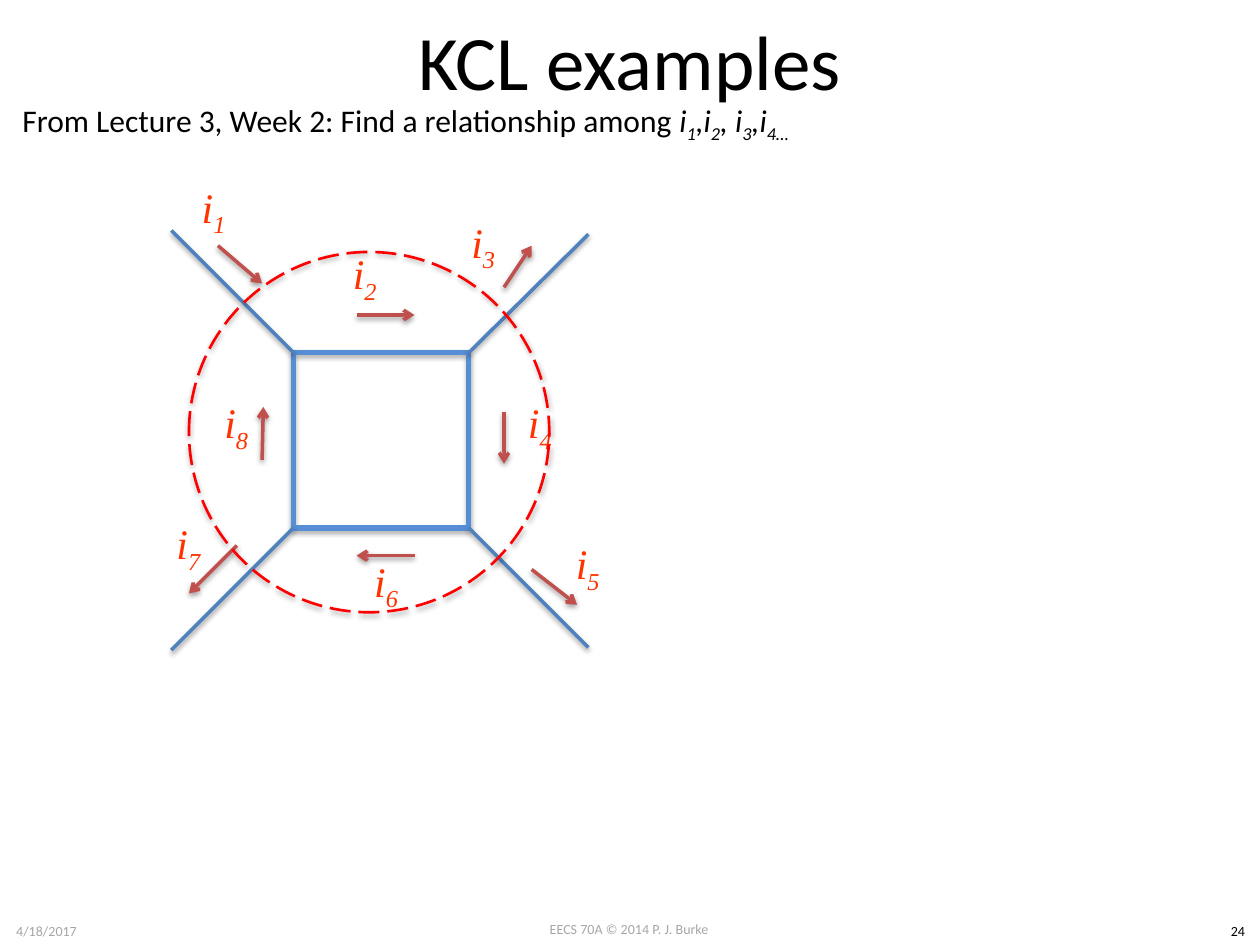
from lxml.etree import SubElement
from pptx import Presentation
from pptx.dml.color import RGBColor
from pptx.enum.dml import MSO_LINE
from pptx.enum.shapes import MSO_CONNECTOR, MSO_SHAPE
from pptx.enum.text import MSO_ANCHOR, PP_ALIGN
from pptx.oxml.ns import qn
from pptx.util import Inches, Pt


def color(value):
    return RGBColor.from_string(value)


class CircuitSlide:
    font = "Calibri"
    label_font = "Times New Roman"
    black = "000000"
    gray = "A6A6A6"
    label_color = "FF3300"
    arrow_color = "C0504D"
    wire_color = "4F81BD"
    loop_color = "558ED5"
    boundary_color = "FF0000"

    def __init__(self, presentation):
        self.slide = presentation.slides.add_slide(presentation.slide_layouts[5])

    def style_font(self, font, name, size, value):
        font.name = name
        font.size = Pt(size)
        font.color.rgb = color(value)

    def title(self, text):
        shape = self.slide.shapes.title
        shape.left, shape.top = Inches(0.5), Inches(0)
        shape.width, shape.height = Inches(9), Inches(0.95)
        shape.text_frame.text = text
        shape.text_frame.vertical_anchor = MSO_ANCHOR.MIDDLE
        paragraph = shape.text_frame.paragraphs[0]
        paragraph.alignment = PP_ALIGN.CENTER
        self.style_font(paragraph.font, self.font, 44, self.black)

    def text(self, box, pieces, size, value, name=font,
             align=PP_ALIGN.CENTER, anchor=MSO_ANCHOR.TOP, wrap=True):
        shape = self.slide.shapes.add_textbox(*map(Inches, box))
        frame = shape.text_frame
        frame.word_wrap = wrap
        frame.vertical_anchor = anchor
        paragraph = frame.paragraphs[0]
        paragraph.alignment = align
        self.style_font(paragraph.font, name, size, value)
        for content, italic, subscript in pieces:
            run = paragraph.add_run()
            run.text = content
            run.font.italic = italic
            if subscript:
                run._r.get_or_add_rPr().set("baseline", "-25000")

    def label(self, number, left, top):
        self.text((left, top, 0.77, 0.61),
                  [("i", True, False), (str(number), True, True)],
                  24, self.label_color, self.label_font,
                  anchor=MSO_ANCHOR.MIDDLE)

    def footer(self, box, content, value):
        self.text(box, [(content, False, False)], 8, value)

    def shadow(self, effects, opacity):
        outer = SubElement(effects, qn("a:outerShdw"), blurRad=str(Pt(3.1)),
                           dist=str(Pt(1.6)), dir="5400000", rotWithShape="0")
        black = SubElement(outer, qn("a:srgbClr"), val=self.black)
        SubElement(black, qn("a:alpha"), val=str(opacity * 1000))

    def line(self, start, end, value, arrow=False):
        connector = self.slide.shapes.add_connector(
            MSO_CONNECTOR.STRAIGHT, *map(Inches, start + end))
        connector.line.color.rgb = color(value)
        connector.line.width = Pt(2)
        properties = connector._element.spPr
        if arrow:
            SubElement(properties.find(qn("a:ln")), qn("a:tailEnd"), type="arrow")
        self.shadow(SubElement(properties, qn("a:effectLst")), 38)

    def outline(self, kind, box, value, width, dash=None):
        shape = self.slide.shapes.add_shape(kind, *map(Inches, box))
        shape.fill.background()
        shape.line.color.rgb = color(value)
        shape.line.width = Pt(width)
        if dash:
            shape.line.dash_style = dash
        shape.shadow.inherit = False
        self.shadow(shape._element.spPr.find(qn("a:effectLst")), 35)


def main():
    presentation = Presentation()
    presentation.slide_width = Inches(10)
    presentation.slide_height = Inches(7.5)
    circuit = CircuitSlide(presentation)

    circuit.title("KCL examples")
    question = [("From Lecture 3, Week 2: Find a relationship among ", False, False)]
    for name, index in (("i", "1"), (",i", "2"), (", i", "3"), (",i", "4…")):
        question += [(name, True, False), (index, True, True)]
    circuit.text((0.08, 0.75, 6.42, 0.4), question, 18, circuit.black,
                 align=PP_ALIGN.LEFT, wrap=False)

    left, top, side = 2.33, 2.8, 1.39
    right, bottom = left + side, top + side
    circuit.outline(MSO_SHAPE.RECTANGLE, (left, top, side, side),
                    circuit.loop_color, 3)
    for corner, end in (
        ((left, top), (1.36, 1.83)),
        ((right, top), (4.67, 1.86)),
        ((right, bottom), (4.67, 5.14)),
        ((left, bottom), (1.36, 5.16)),
    ):
        circuit.line(corner, end, circuit.wire_color)

    currents = [
        ((1.31, 1.36), (1.73, 1.95), (2.08, 2.25)),
        ((2.51, 1.89), (2.83, 2.5), (3.29, 2.5)),
        ((3.45, 1.64), (4, 2.28), (4.22, 1.95)),
        ((3.9, 3.07), (4, 3.27), (4, 3.68)),
        ((4.28, 4.19), (4.22, 4.52), (4.58, 4.8)),
        ((2.68, 4.33), (3.29, 4.41), (2.83, 4.41)),
        ((1.11, 4.03), (1.88, 4.33), (1.5, 4.71)),
        ((1.49, 3.07), (2.08, 3.65), (2.09, 3.23)),
    ]
    for number, (place, start, end) in enumerate(currents, 1):
        circuit.label(number, *place)
        circuit.line(start, end, circuit.arrow_color, arrow=True)

    circuit.outline(MSO_SHAPE.OVAL, (1.5, 2, 2.86, 2.86),
                    circuit.boundary_color, 1.5, MSO_LINE.LONG_DASH)

    circuit.footer((0, 7.27, 0.74, 0.24), "4/18/2017", circuit.gray)
    circuit.footer((3.83, 7.26, 2.33, 0.24), "EECS 70A © 2014 P. J. Burke",
                   circuit.gray)
    circuit.footer((9.65, 7.27, 0.35, 0.24), "24", circuit.black)

    presentation.save("out.pptx")


if __name__ == "__main__":
    main()
